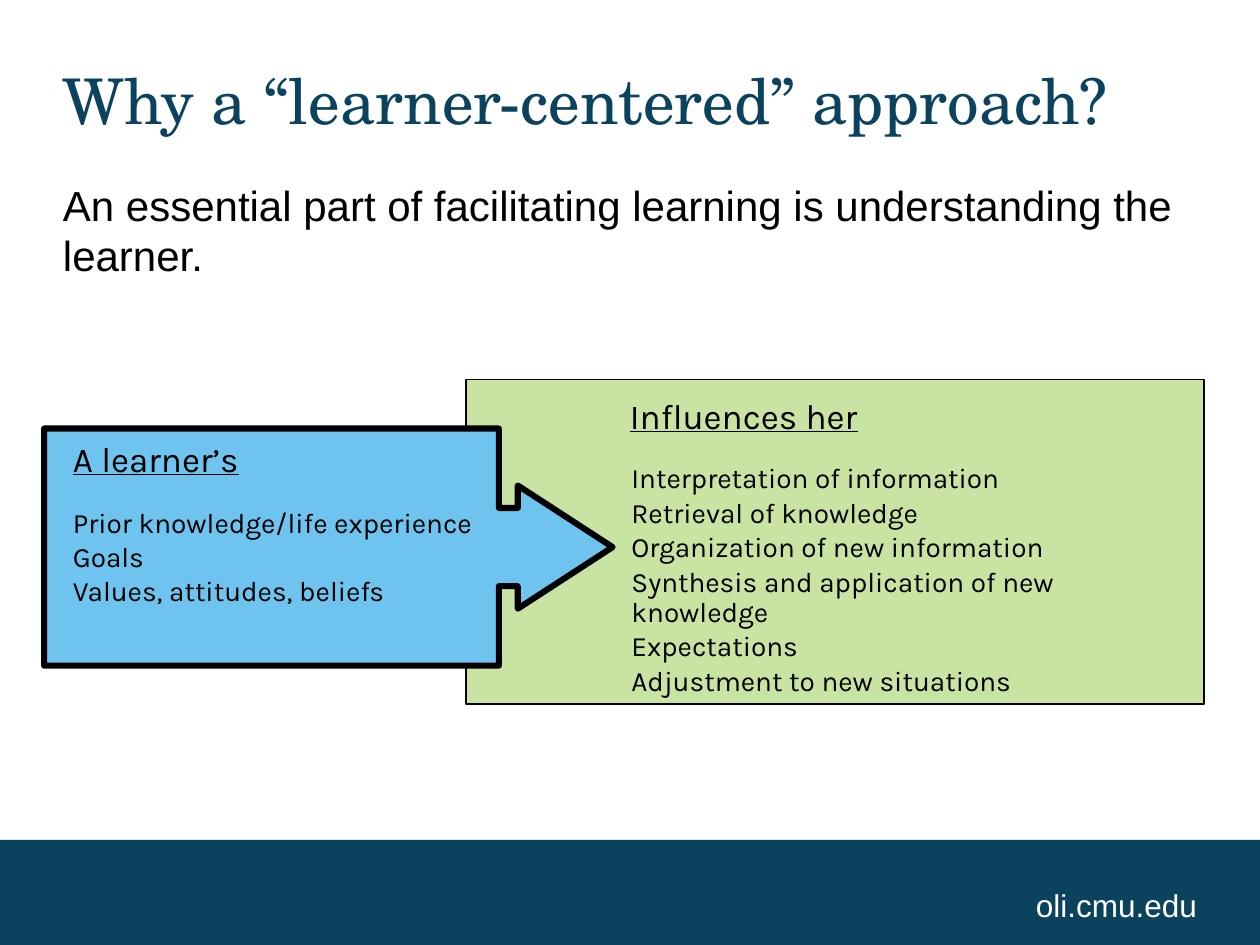
import pptx
import pptx.util
import pptx.dml.color
import pptx.enum.shapes
import pptx.enum.text

Cm, Pt = pptx.util.Cm, pptx.util.Pt
SHAPE = pptx.enum.shapes.MSO_SHAPE
ANCHOR = pptx.enum.text.MSO_ANCHOR
ALIGN = pptx.enum.text.PP_ALIGN

COLORS = {"navy": "0B435F", "green": "C8E3A2", "blue": "6EC4EE",
          "black": "000000", "white": "FFFFFF"}

STYLES = {
    "title": dict(font="TeX Gyre Schola", size=36, color="navy", anchor=ANCHOR.MIDDLE),
    "body": dict(font="Arial", size=24),
    "heading": dict(font="Karla", size=20, underline=True, line_spacing=0.9),
    "list": dict(font="Karla", size=16, line_spacing=0.9, gap=2.4),
    "footer": dict(font="Arial", size=18, color="white", anchor=ANCHOR.BOTTOM,
                   align=ALIGN.RIGHT),
}

# Positions are left, top, width, height in centimetres.
SHAPES = [
    (SHAPE.RECTANGLE, (0, 16.93, 25.4, 2.12), "navy", 0, ()),
    (SHAPE.RECTANGLE, (9.4, 7.65, 14.88, 6.55), "green", 1, ()),
    (SHAPE.RIGHT_ARROW_CALLOUT, (0.89, 8.64, 11.46, 4.78), "blue", 3.5,
     (0.33, 0.26, 0.4, 0.8)),
]

TEXTS = [
    ("title", (1.27, 1.27, 22.86, 1.47), ["Why a “learner-centered” approach?"]),
    ("body", (1.27, 3.61, 22.86, 3),
     ["An essential part of facilitating learning is understanding the learner."]),
    ("heading", (1.47, 8.92, 8.26, 0.76), ["A learner’s"]),
    ("list", (1.47, 10.26, 8.23, 2.03),
     ["Prior knowledge/life experience", "Goals", "Values, attitudes, beliefs"]),
    ("heading", (12.7, 8.05, 5.05, 0.76), ["Influences her"]),
    ("list", (12.73, 9.37, 11.3, 4.19),
     ["Interpretation of information", "Retrieval of knowledge",
      "Organization of new information",
      "Synthesis and application of new knowledge",
      "Expectations", "Adjustment to new situations"]),
    ("footer", (19.48, 17.35, 4.65, 1.27), ["oli.cmu.edu"]),
]


def rgb(name):
    return pptx.dml.color.RGBColor.from_string(COLORS[name])


def add_block(page, kind, place, fill, line_width, adjustments):
    block = page.shapes.add_shape(kind, *map(Cm, place))
    block.shadow.inherit = False
    block.fill.solid()
    block.fill.fore_color.rgb = rgb(fill)
    if line_width:
        block.line.color.rgb = rgb("black")
        block.line.width = Pt(line_width)
    else:
        block.line.fill.background()
    for index, value in enumerate(adjustments):
        block.adjustments[index] = value


def add_text(page, style_name, place, lines):
    style = STYLES[style_name]
    frame = page.shapes.add_textbox(*map(Cm, place)).text_frame
    frame.word_wrap = True
    frame.margin_left = frame.margin_right = frame.margin_top = frame.margin_bottom = 0
    frame.vertical_anchor = style.get("anchor", ANCHOR.TOP)
    for index, line in enumerate(lines):
        para = frame.add_paragraph() if index else frame.paragraphs[0]
        para.alignment = style.get("align", ALIGN.LEFT)
        para.line_spacing = style.get("line_spacing", 1.0)
        if index:
            para.space_before = Pt(style["gap"])
        span = para.add_run()
        span.text = line
        span.font.name = style["font"]
        span.font.size = Pt(style["size"])
        span.font.underline = style.get("underline")
        span.font.color.rgb = rgb(style.get("color", "black"))


def main():
    deck = pptx.Presentation()
    deck.slide_width, deck.slide_height = Cm(25.4), Cm(19.05)
    page = deck.slides.add_slide(deck.slide_layouts[6])
    for block in SHAPES:
        add_block(page, *block)
    for text in TEXTS:
        add_text(page, *text)
    deck.save("out.pptx")


if __name__ == "__main__":
    main()
